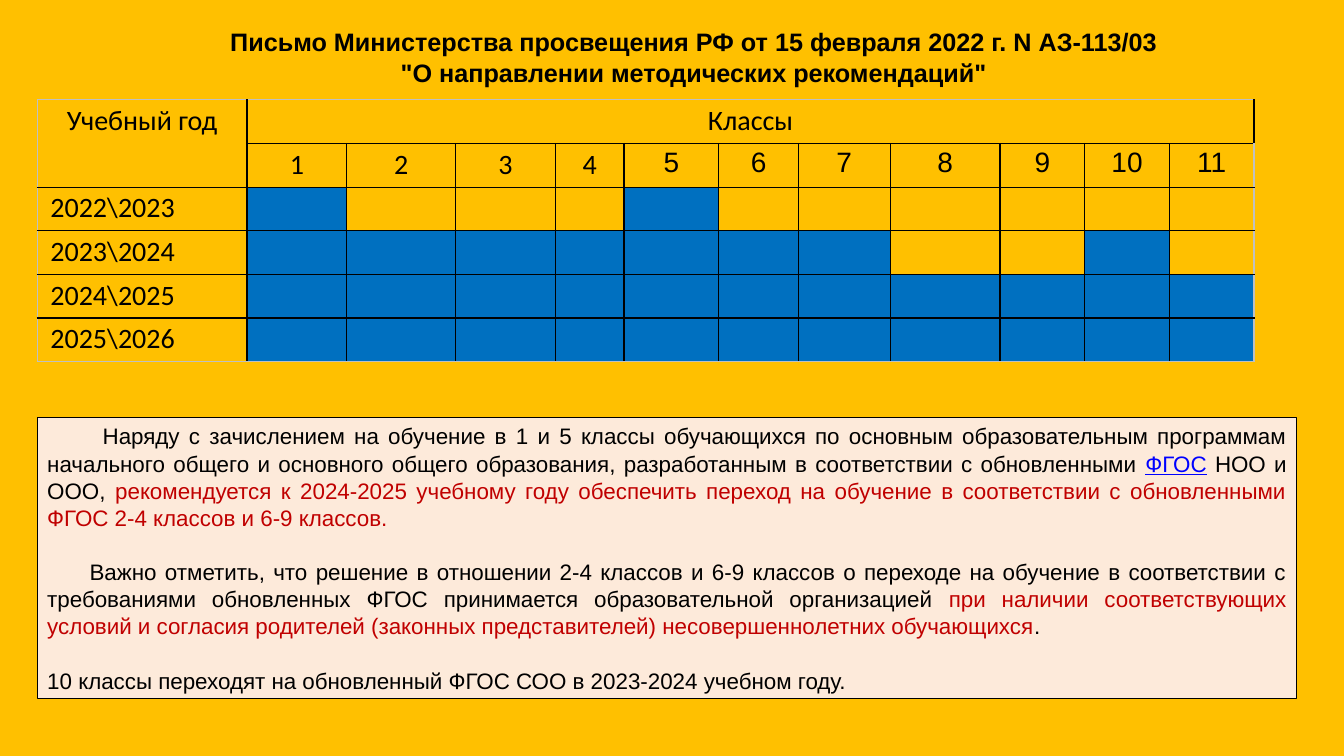
from dataclasses import dataclass

from lxml.etree import SubElement
from pptx import Presentation
from pptx.dml.color import RGBColor
from pptx.enum.shapes import MSO_SHAPE
from pptx.enum.text import MSO_ANCHOR, PP_ALIGN
from pptx.oxml.ns import qn
from pptx.util import Inches, Pt


@dataclass(frozen=True)
class Theme:
    background: str = "FFC000"
    ink: str = "000000"
    accent: str = "C00000"
    link: str = "0000FF"
    panel: str = "FDEADA"
    active: str = "0070C0"
    frame: str = "C0C0C0"
    text_font: str = "Arial"
    table_font: str = "Calibri"
    title_size: float = 18
    title_leading: float = 22
    body_size: float = 16
    body_leading: float = 19.4
    table_size: float = 20


THEME = Theme()

TITLE = (
    "Письмо Министерства просвещения РФ от 15 февраля 2022 г. N АЗ-113/03\v"
    "\"О направлении методических рекомендаций\""
)

# Each paragraph: first-line indent and its (text, colour) spans
NOTES = [
    (0.55, [
        ("Наряду с зачислением на обучение в 1 и 5 классы обучающихся по основным "
         "образовательным программам начального общего и основного общего образования, "
         "разработанным в соответствии с обновленными ", THEME.ink),
        ("ФГОС", THEME.link),
        (" НОО и ООО, ", THEME.ink),
        ("рекомендуется к 2024-2025 учебному году обеспечить переход на обучение "
         "в соответствии с обновленными ФГОС 2-4 классов и 6-9 классов.", THEME.accent),
    ]),
    (0.42, [
        ("Важно отметить, что решение в отношении 2-4 классов и 6-9 классов о переходе "
         "на обучение в соответствии с требованиями обновленных ФГОС принимается "
         "образовательной организацией ", THEME.ink),
        ("при наличии соответствующих условий и согласия родителей (законных "
         "представителей) несовершеннолетних обучающихся", THEME.accent),
        (".", THEME.ink),
    ]),
    (0, [("10 классы переходят на обновленный ФГОС СОО в 2023-2024 учебном году.", THEME.ink)]),
]

GRADES = range(1, 12)
ACTIVE_GRADES = {
    "2022\\2023": {1, 5},
    "2023\\2024": {*range(1, 8), 10},
    "2024\\2025": set(GRADES),
    "2025\\2026": set(GRADES),
}
COLUMN_WIDTHS = [2.08, 0.99, 1.08, 0.99, 0.68, 0.94, 0.79, 0.91, 1.09, 0.84, 0.84, 0.84]
TABLE_HEIGHT = 2.6


def color(value):
    return RGBColor.from_string(value)


def style_span(span, size, font=THEME.text_font, ink=THEME.ink, bold=False):
    span.font.size = Pt(size)
    span.font.name = font
    span.font.color.rgb = color(ink)
    span.font.bold = bold


def add_title(page):
    box = page.shapes.add_textbox(Inches(0.58), Inches(0.21), Inches(12.6), Inches(0.71))
    box.text_frame.word_wrap = True
    para = box.text_frame.paragraphs[0]
    para.text = TITLE
    para.alignment = PP_ALIGN.CENTER
    para.line_spacing = Pt(THEME.title_leading)
    for span in para.runs:
        style_span(span, THEME.title_size, bold=True)


def add_notes(page):
    panel = page.shapes.add_shape(
        MSO_SHAPE.RECTANGLE, Inches(0.37), Inches(4.14), Inches(12.49), Inches(2.79))
    panel.shadow.inherit = False
    panel.fill.solid()
    panel.fill.fore_color.rgb = color(THEME.panel)
    panel.line.color.rgb = color(THEME.ink)
    panel.line.width = Pt(1)
    frame = panel.text_frame
    frame.word_wrap = True
    frame.vertical_anchor = MSO_ANCHOR.TOP
    for index, (indent, spans) in enumerate(NOTES):
        para = frame.add_paragraph() if index else frame.paragraphs[0]
        para.alignment = PP_ALIGN.JUSTIFY
        para.line_spacing = Pt(THEME.body_leading)
        para.space_before = Pt(THEME.body_leading if index else 0)
        para._p.get_or_add_pPr().set("indent", str(Inches(indent)))
        for text, ink in spans:
            span = para.add_run()
            span.text = text
            style_span(span, THEME.body_size, ink=ink)
            span.font.underline = ink == THEME.link


def set_borders(cell, outer_sides):
    properties = cell._tc.get_or_add_tcPr()
    for side in "LRTB":
        line = SubElement(properties, qn(f"a:ln{side}"), w=str(Pt(1)))
        fill = SubElement(line, qn("a:solidFill"))
        ink = THEME.frame if side in outer_sides else THEME.ink
        SubElement(fill, qn("a:srgbClr"), val=ink)


def write_cell(cell, text, font=THEME.table_font, alignment=PP_ALIGN.CENTER):
    para = cell.text_frame.paragraphs[0]
    para.text = text
    para.alignment = alignment
    style_span(para.runs[0], THEME.table_size, font)


def add_schedule(page):
    row_count, column_count = len(ACTIVE_GRADES) + 2, len(COLUMN_WIDTHS)
    table = page.shapes.add_table(
        row_count, column_count, Inches(0.37), Inches(0.99),
        Inches(sum(COLUMN_WIDTHS)), Inches(TABLE_HEIGHT)).table
    table.first_row = table.horz_banding = False
    for column, width in zip(table.columns, COLUMN_WIDTHS):
        column.width = Inches(width)
    for row in table.rows:
        row.height = Inches(TABLE_HEIGHT / row_count)

    # Grid: grey outer frame, black inner lines, no fill
    for r in range(row_count):
        for c in range(column_count):
            cell = table.cell(r, c)
            edges = {"L": c == 0, "R": c == column_count - 1,
                     "T": r == 0, "B": r == row_count - 1}
            set_borders(cell, [side for side, is_outer in edges.items() if is_outer])
            cell.fill.background()
            cell.margin_left = cell.margin_right = Inches(0.13)
            cell.margin_top = cell.margin_bottom = Inches(0.04)

    # Header rows
    table.cell(0, 0).merge(table.cell(1, 0))
    table.cell(0, 1).merge(table.cell(0, column_count - 1))
    write_cell(table.cell(0, 0), "Учебный год")
    write_cell(table.cell(0, 1), "Классы")
    for grade in GRADES:
        font = THEME.table_font if grade < 5 else THEME.text_font
        write_cell(table.cell(1, grade), str(grade), font)

    # School years and the grades that have switched
    for r, (year, active) in enumerate(ACTIVE_GRADES.items(), start=2):
        write_cell(table.cell(r, 0), year, alignment=PP_ALIGN.LEFT)
        for grade in active:
            fill = table.cell(r, grade).fill
            fill.solid()
            fill.fore_color.rgb = color(THEME.active)


def main():
    deck = Presentation()
    deck.slide_width, deck.slide_height = Inches(13.33), Inches(7.5)
    page = deck.slides.add_slide(deck.slide_layouts[6])
    page.background.fill.solid()
    page.background.fill.fore_color.rgb = color(THEME.background)
    add_title(page)
    add_notes(page)
    add_schedule(page)
    deck.save("out.pptx")


if __name__ == "__main__":
    main()
